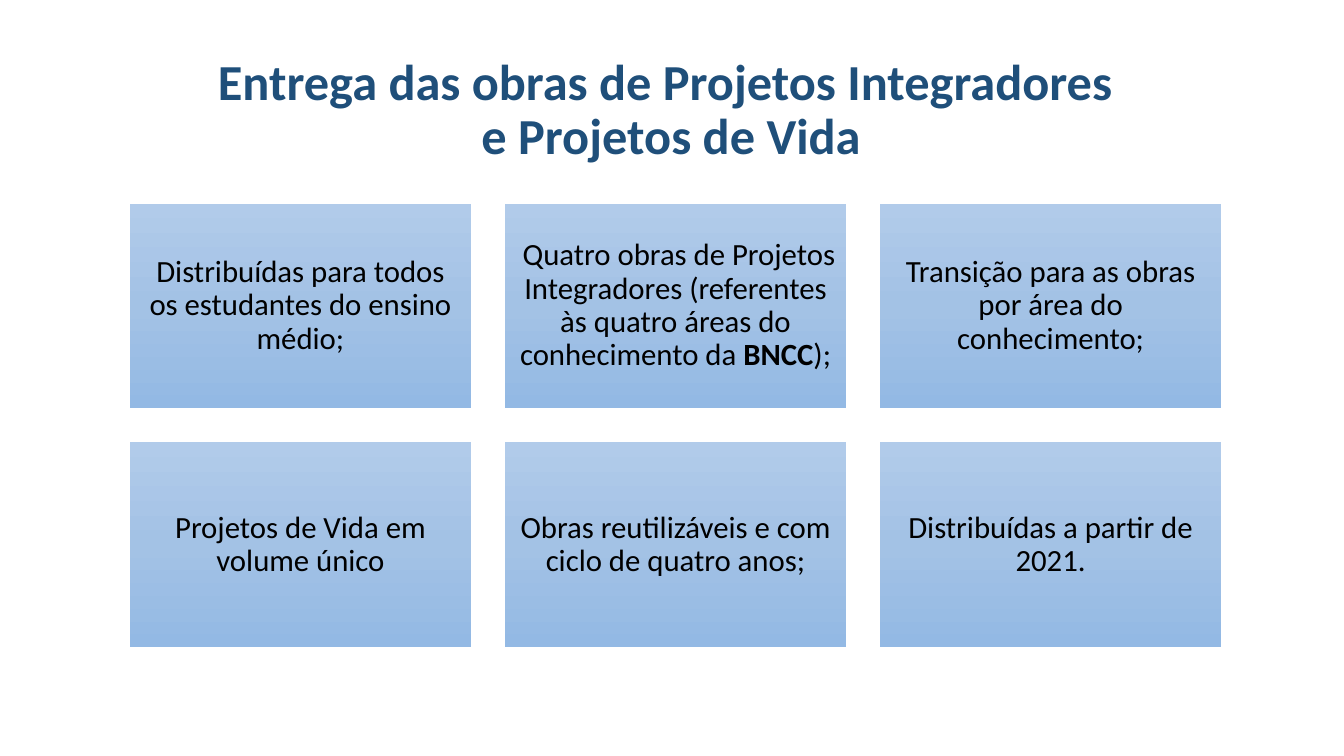
from copy import deepcopy
from dataclasses import dataclass

from pptx import Presentation
from pptx.dml.color import RGBColor
from pptx.enum.text import MSO_ANCHOR, PP_ALIGN
from pptx.oxml.ns import qn
from pptx.shapes.autoshape import Shape
from pptx.enum.shapes import MSO_SHAPE
from pptx.slide import Slide
from pptx.text.text import TextFrame
from pptx.util import Emu, Pt

EMU_PER_PX = 9144
FONT = "Calibri"
COLORS = {
    "title": "1F4F7A",
    "text": "000000",
    "card_top": "B1CBEA",
    "card_middle": "A3C2E5",
    "card_bottom": "93B9E4",
}
COLUMNS = 3
CARD_LEFT, CARD_TOP = 129, 202
CARD_WIDTH, CARD_HEIGHT = 338, 203
CARD_GAP = 34
CARD_INSET = 9


@dataclass(frozen=True)
class Card:
    text: str
    bold: str = ""
    ending: str = ""


CARDS = [
    Card("Distribuídas para todos os estudantes do ensino médio;"),
    Card(
        " Quatro obras de Projetos Integradores (referentes às quatro áreas do conhecimento da ",
        "BNCC",
        ");",
    ),
    Card("Transição para as obras por área do conhecimento;"),
    Card("Projetos de Vida em volume único"),
    Card("Obras reutilizáveis e com ciclo de quatro anos;"),
    Card("Distribuídas a partir de 2021."),
]


def px(length: int) -> Emu:
    return Emu(length * EMU_PER_PX)


def color(name: str) -> RGBColor:
    return RGBColor.from_string(COLORS[name])


def format_text(text_frame: TextFrame, size: int, color_name: str) -> None:
    text_frame.word_wrap = True
    paragraph = text_frame.paragraphs[0]
    paragraph.alignment = PP_ALIGN.CENTER
    paragraph.line_spacing = 0.9
    for run in paragraph.runs:
        run.font.name = FONT
        run.font.size = Pt(size)
        run.font.color.rgb = color(color_name)


def fill_gradient(shape: Shape) -> None:
    shape.fill.gradient()
    shape.fill.gradient_angle = 270
    stop_list = shape.element.spPr.find(qn("a:gradFill")).find(qn("a:gsLst"))
    stop_list.insert(1, deepcopy(stop_list[0]))
    names = ("card_top", "card_middle", "card_bottom")
    for index, (stop, name) in enumerate(zip(shape.fill.gradient_stops, names)):
        stop.position = index / 2
        stop.color.rgb = color(name)


def add_title(slide: Slide) -> None:
    title = slide.shapes.add_textbox(px(85), px(24), px(1150), px(145))
    text_frame = title.text_frame
    text_frame.text = "Entrega das obras de Projetos Integradores\v e Projetos de Vida"
    text_frame.vertical_anchor = MSO_ANCHOR.BOTTOM
    format_text(text_frame, 36, "title")
    for run in text_frame.paragraphs[0].runs:
        run.font.bold = True


def add_card(slide: Slide, card: Card, index: int) -> None:
    row, column = divmod(index, COLUMNS)
    shape = slide.shapes.add_shape(
        MSO_SHAPE.RECTANGLE,
        px(CARD_LEFT + column * (CARD_WIDTH + CARD_GAP)),
        px(CARD_TOP + row * (CARD_HEIGHT + CARD_GAP)),
        px(CARD_WIDTH),
        px(CARD_HEIGHT),
    )
    shape.shadow.inherit = False
    shape.line.fill.background()
    fill_gradient(shape)
    text_frame = shape.text_frame
    text_frame.margin_left = text_frame.margin_right = px(CARD_INSET)
    text_frame.margin_top = text_frame.margin_bottom = px(CARD_INSET)
    text_frame.vertical_anchor = MSO_ANCHOR.MIDDLE
    text_frame.text = card.text
    paragraph = text_frame.paragraphs[0]
    paragraph.space_after = Pt(9.2)
    if card.bold:
        bold_run = paragraph.add_run()
        bold_run.text = card.bold
        bold_run.font.bold = True
        paragraph.add_run().text = card.ending
    format_text(text_frame, 22, "text")


def main() -> None:
    presentation = Presentation()
    presentation.slide_width = px(1333)
    presentation.slide_height = px(750)
    slide = presentation.slides.add_slide(presentation.slide_layouts[6])
    add_title(slide)
    for index, card in enumerate(CARDS):
        add_card(slide, card, index)
    presentation.save("out.pptx")


if __name__ == "__main__":
    main()
